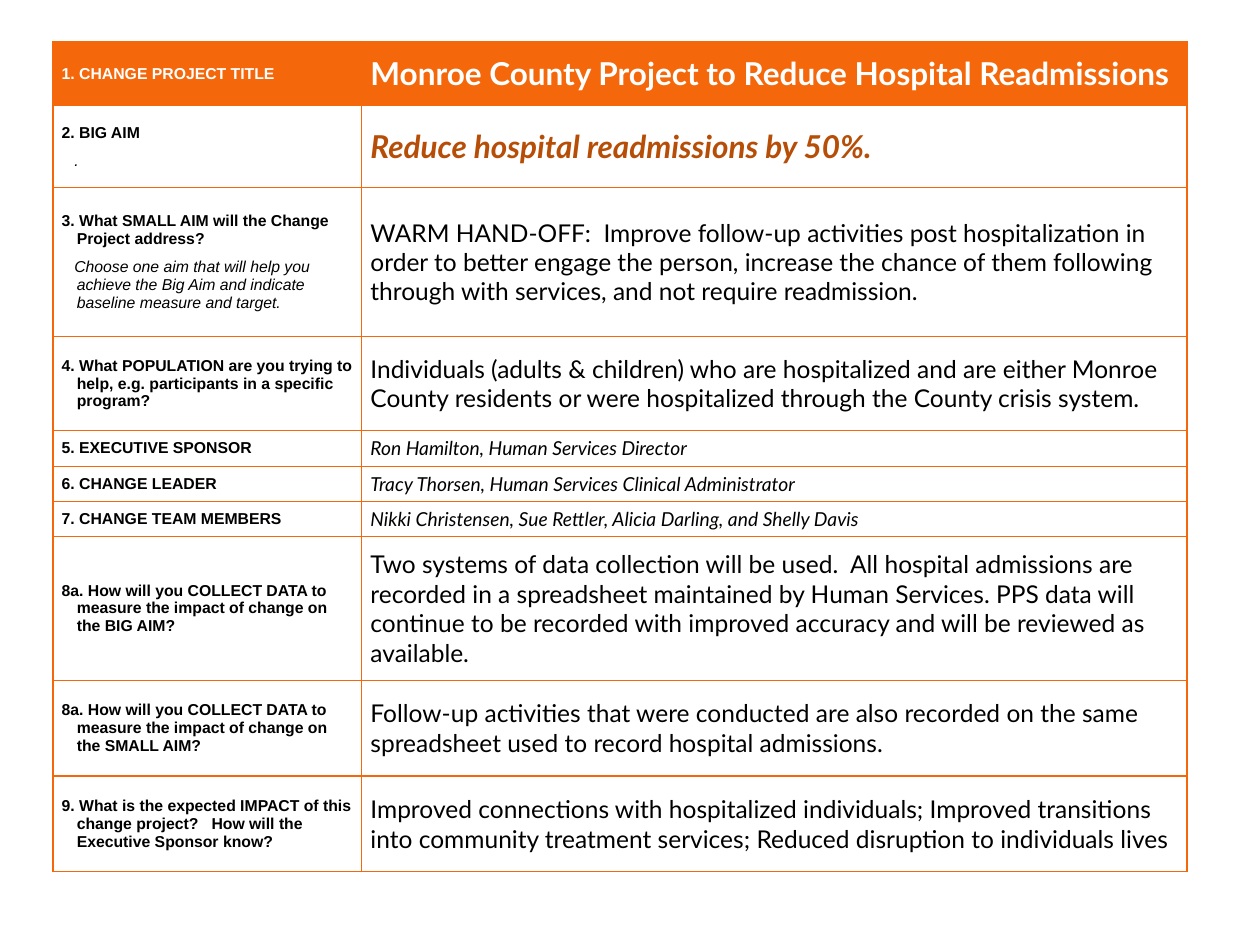
from lxml import etree
from pptx import Presentation
from pptx import util as u
from pptx.dml.color import RGBColor
from pptx.enum import text
from pptx.oxml.ns import qn

HUES = {"line": "F4680B", "head": "F4680B", "white": "FFFFFF",
        "ink": "000000", "aim": "B74E08"}

STYLES = {
    "label": {"name": "Arial", "size": 9, "bold": True, "italic": False},
    "hint": {"name": "Arial", "size": 9, "bold": False, "italic": True},
    "title": {"name": "Lato", "size": 18, "bold": True, "italic": False},
    "aim": {"name": "Lato", "size": 18, "bold": True, "italic": True},
    "body": {"name": "Lato", "size": 14, "bold": False, "italic": False},
    "name": {"name": "Lato", "size": 11, "bold": False, "italic": True},
}
INDENTS = {"label": (0.12, -0.12), "hint": (0.12, -0.02)}

ROWS = [
    (0.51, "1. CHANGE PROJECT TITLE", "", "title",
     "Monroe County Project to Reduce Hospital Readmissions"),
    (0.65, "2. BIG AIM", ".", "aim", "Reduce hospital readmissions by 50%."),
    (1.18, "3. What SMALL AIM will the Change Project address?",
     "Choose one aim that will help you achieve the Big Aim and indicate "
     "baseline measure and target.", "body",
     "WARM HAND-OFF:  Improve follow-up activities post hospitalization in "
     "order to better engage the person, increase the chance of them "
     "following through with services, and not require readmission."),
    (0.75, "4. What POPULATION are you trying to help, e.g. participants in "
     "a specific program?", "", "body",
     "Individuals (adults & children) who are hospitalized and are either "
     "Monroe County residents or were hospitalized through the County "
     "crisis system."),
    (0.28, "5. EXECUTIVE SPONSOR", "", "name",
     "Ron Hamilton, Human Services Director"),
    (0.28, "6. CHANGE LEADER", "", "name",
     "Tracy Thorsen, Human Services Clinical Administrator"),
    (0.28, "7. CHANGE TEAM MEMBERS", "", "name",
     "Nikki Christensen, Sue Rettler, Alicia Darling, and Shelly Davis"),
    (1.14, "8a. How will you COLLECT DATA to measure the impact of change on "
     "the BIG AIM?", "", "body",
     "Two systems of data collection will be used.  All hospital admissions "
     "are recorded in a spreadsheet maintained by Human Services. PPS data "
     "will continue to be recorded with improved accuracy and will be "
     "reviewed as available."),
    (0.76, "8a. How will you COLLECT DATA to measure the impact of change on "
     "the SMALL AIM?", "", "body",
     "Follow-up activities that were conducted are also recorded on the "
     "same spreadsheet used to record hospital admissions."),
    (0.76, "9. What is the expected IMPACT of this change project?   How will "
     "the Executive Sponsor know?", "", "body",
     "Improved connections with hospitalized individuals; Improved "
     "transitions into community treatment services; Reduced disruption to "
     "individuals lives"),
]
COLS = [2.45, 6.55]
LEFT, TOP = 0.42, 0.33


def add_para(para, words, style, hue):
    para.space_before = u.Pt(6)
    if style in INDENTS:
        left, first = INDENTS[style]
        props = para._p.get_or_add_pPr()
        props.set("marL", str(u.Inches(left)))
        props.set("indent", str(u.Inches(first)))
    run = para.add_run()
    run.text = words
    for key, val in STYLES[style].items():
        setattr(run.font, key, u.Pt(val) if key == "size" else val)
    run.font.color.rgb = RGBColor.from_string(HUES[hue])


def add_edges(cell):
    props = cell._tc.get_or_add_tcPr()
    for spot, side in enumerate(("lnL", "lnR", "lnT", "lnB")):
        line = etree.Element(qn(f"a:{side}"), w=str(u.Pt(0.79)))
        fill = etree.SubElement(line, qn("a:solidFill"))
        etree.SubElement(fill, qn("a:srgbClr"), val=HUES["line"])
        props.insert(spot, line)


def fill_cell(cell, parts, head):
    form = {"margin_left": u.Inches(0.07), "margin_right": u.Inches(0.07),
            "margin_top": 0, "margin_bottom": 0,
            "vertical_anchor": text.MSO_ANCHOR.MIDDLE}
    for key, val in form.items():
        setattr(cell, key, val)
    cell.fill.solid()
    cell.fill.fore_color.rgb = RGBColor.from_string(
        HUES["head" if head else "white"])
    add_edges(cell)
    frame = cell.text_frame
    for num, (words, style) in enumerate(parts):
        para = frame.add_paragraph() if num else frame.paragraphs[0]
        hue = "white" if head else "aim" if style == "aim" else "ink"
        add_para(para, words, style, hue)


def main():
    deck = Presentation()
    deck.slide_width, deck.slide_height = u.Inches(10), u.Inches(7.5)
    slide = deck.slides.add_slide(deck.slide_layouts[6])
    tall = sum(row[0] for row in ROWS)
    grid = slide.shapes.add_table(
        len(ROWS), len(COLS), u.Inches(LEFT), u.Inches(TOP),
        u.Inches(sum(COLS)), u.Inches(tall)).table
    grid.horz_banding = False
    for col, wide in zip(grid.columns, COLS):
        col.width = u.Inches(wide)
    for num, (high, label, hint, style, words) in enumerate(ROWS):
        grid.rows[num].height = u.Inches(high)
        parts = [(label, "label")] + ([(hint, "hint" if num > 1 else "hint")]
                                      if hint else [])
        fill_cell(grid.cell(num, 0), parts, num == 0)
        fill_cell(grid.cell(num, 1), [(words, style)], num == 0)
    deck.save("out.pptx")


if __name__ == "__main__":
    main()
